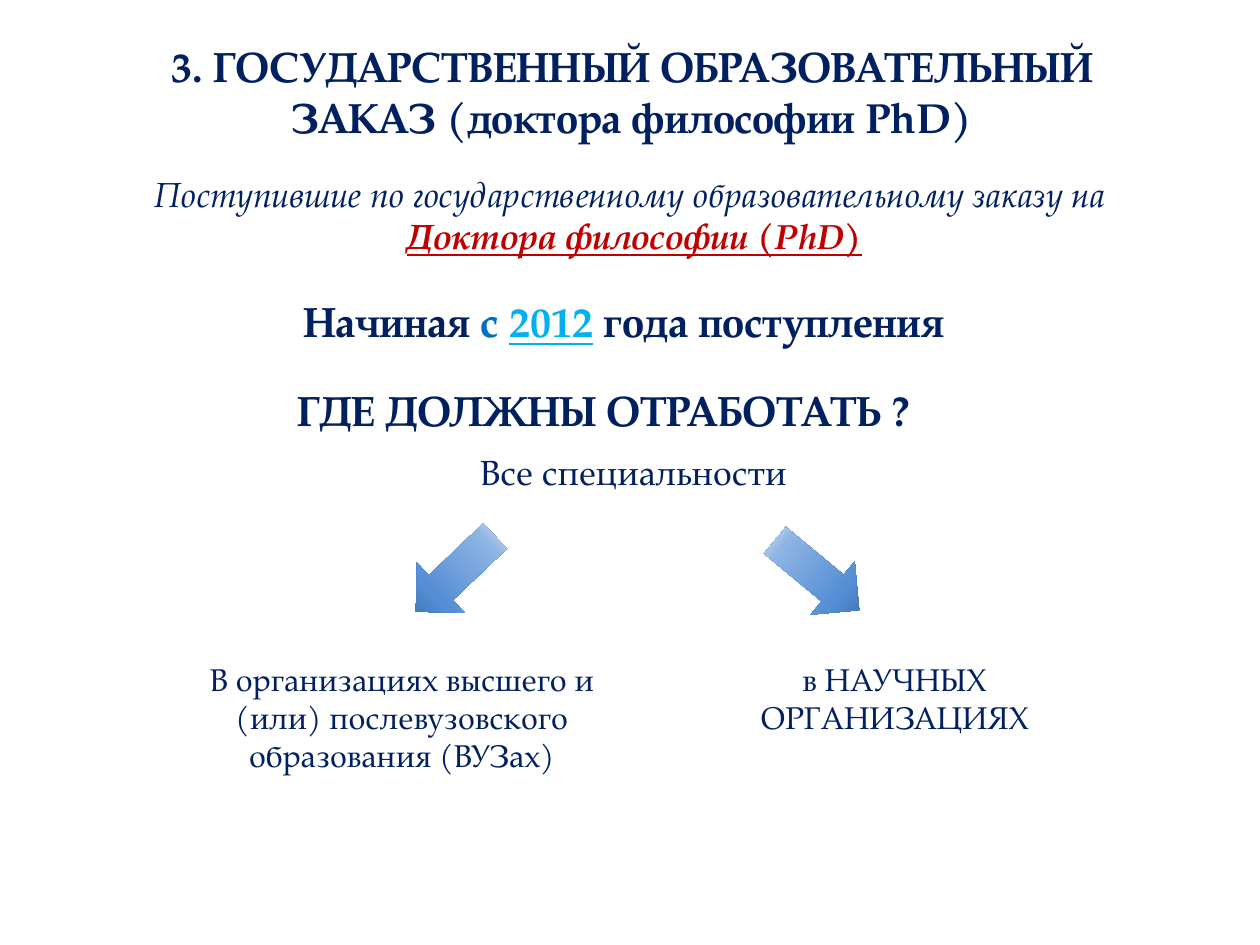
import pptx
import pptx.dml.color
import pptx.enum.shapes
import pptx.enum.text
import pptx.oxml
import pptx.oxml.ns
import pptx.util

Inches = pptx.util.Inches
CENTER = pptx.enum.text.PP_ALIGN.CENTER
LEFT = pptx.enum.text.PP_ALIGN.LEFT

FONT = "TeX Gyre Pagella"
NAVY, RED, BLUE, SKY = "002060", "C00000", "0070C0", "00B0F0"
ARROW_STOPS = [(0, "2F5F99"), (33, "558ED5"), (75, "8EB4E3"), (100, "FFFFFF")]


def color(value):
    return pptx.dml.color.RGBColor.from_string(value)


class SlideBuilder:
    """Holds the style and the current slide."""

    def __init__(self, slide):
        self.slide = slide

    def set_text(self, shape, lines, size, align=CENTER, wrap=True, bold=False, italic=False):
        """Fill a shape with lines of (text, colour, accents) parts."""
        frame = shape.text_frame
        frame.word_wrap = wrap
        frame.auto_size = pptx.enum.text.MSO_AUTO_SIZE.SHAPE_TO_FIT_TEXT
        paragraph = frame.paragraphs[0]
        paragraph.alignment = align
        font = paragraph.font
        font.name, font.size = FONT, pptx.util.Pt(size)
        font.bold, font.italic = bold, italic
        font.color.rgb = color(NAVY)
        for number, line in enumerate(lines):
            if number:
                paragraph.add_line_break()
            for text, tint, accents in line:
                run = paragraph.add_run()
                run.text = text
                if tint != NAVY:
                    run.font.color.rgb = color(tint)
                if "bold" in accents:
                    run.font.bold = True
                if "underline" in accents:
                    run.font.underline = True

    def title(self, text, box, size):
        heading = self.slide.shapes.title
        heading.left, heading.top, heading.width, heading.height = map(Inches, box)
        heading.text_frame.vertical_anchor = pptx.enum.text.MSO_ANCHOR.MIDDLE
        self.set_text(heading, [[(text, NAVY, ())]], size, bold=True)

    def text(self, lines, box, size, **style):
        if isinstance(lines, str):
            lines = [[(lines, NAVY, ())]]
        self.set_text(self.slide.shapes.add_textbox(*map(Inches, box)), lines, size, **style)

    def arrow(self, box, rotation):
        arrow = self.slide.shapes.add_shape(
            pptx.enum.shapes.MSO_SHAPE.DOWN_ARROW, *map(Inches, box))
        arrow.rotation = rotation
        arrow.shadow.inherit = False
        arrow.line.fill.background()
        arrow.fill.gradient()
        arrow.fill.gradient_angle = 90
        # Replace the two preset stops with the full range
        stops = arrow.element.spPr.find(".//" + pptx.oxml.ns.qn("a:gsLst"))
        for stop in list(stops):
            stops.remove(stop)
        for percent, tint in ARROW_STOPS:
            stops.append(pptx.oxml.parse_xml(
                f'<a:gs {pptx.oxml.ns.nsdecls("a")} pos="{percent * 1000}">'
                f'<a:srgbClr val="{tint}"/></a:gs>'))


def main():
    deck = pptx.Presentation()
    deck.slide_width, deck.slide_height = Inches(10), Inches(7.5)
    page = SlideBuilder(deck.slides.add_slide(deck.slide_layouts[5]))

    # Heading
    page.title("3. ГОСУДАРСТВЕННЫЙ ОБРАЗОВАТЕЛЬНЫЙ ЗАКАЗ (доктора философии PhD)",
               (0.92, 0.27, 8.19, 0.91), 24)

    # Who the rule applies to
    page.text([[("Поступившие по государственному образовательному заказу на ", NAVY, ())],
               [("Доктора философии (PhD)", RED, ("bold", "underline"))]],
              (0.35, 1.32, 9.37, 0.77), 20, italic=True)
    page.text([[("Начиная", NAVY, ()), (" с ", BLUE, ()), ("2012", SKY, ("underline",)),
                (" ", BLUE, ()), ("года поступления", NAVY, ())]],
              (2.31, 2.3, 5.69, 0.5), 24, align=LEFT, wrap=False, bold=True)

    # Question and its scope
    page.text("ГДЕ ДОЛЖНЫ ОТРАБОТАТЬ ?", (2.26, 3, 5.51, 0.5), 24,
              align=LEFT, wrap=False, bold=True)
    page.text("Все специальности", (1.42, 3.53, 7.21, 0.44), 20)

    # Two places of work, each under its arrow
    branches = [
        ((3.34, 4.12, 0.55, 0.87), 46.3, (1.42, 5.19, 3.54, 1.01),
         "В организациях высшего и (или) послевузовского образования (ВУЗах)"),
        ((6.21, 4.13, 0.55, 0.87), 309.7, (5.47, 5.19, 3.26, 0.71),
         "в НАУЧНЫХ ОРГАНИЗАЦИЯХ"),
    ]
    for arrow_box, rotation, place_box, place in branches:
        page.arrow(arrow_box, rotation)
        page.text(place, place_box, 18)

    deck.save("out.pptx")


if __name__ == "__main__":
    main()
